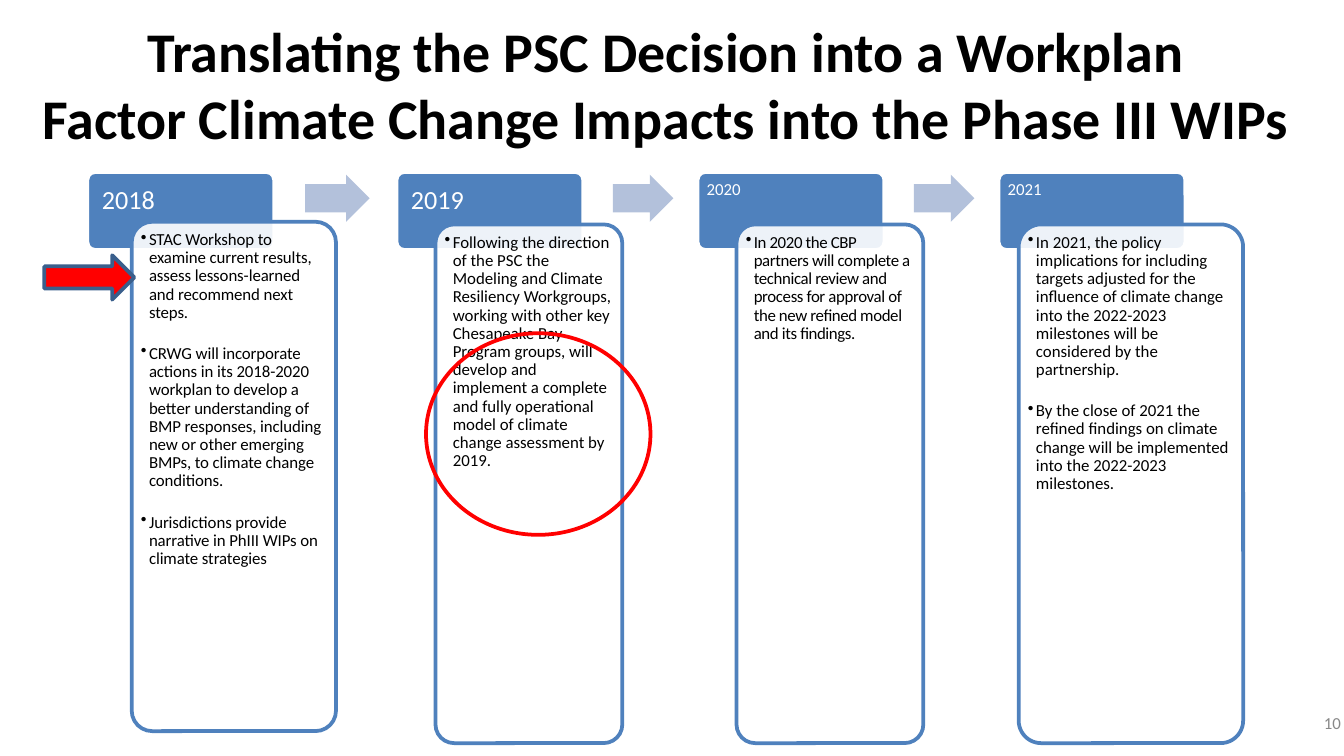
import pptx
import pptx.util
import pptx.dml.color
import pptx.enum.shapes
import pptx.enum.text
import pptx.oxml
import pptx.oxml.ns

Inches = pptx.util.Inches
Pt = pptx.util.Pt
RGBColor = pptx.dml.color.RGBColor
MSO = pptx.enum.shapes.MSO_SHAPE
ANCHOR = pptx.enum.text.MSO_ANCHOR
ALIGN = pptx.enum.text.PP_ALIGN
qn = pptx.oxml.ns.qn

BLACK = RGBColor(0x00, 0x00, 0x00)
WHITE = RGBColor(0xFF, 0xFF, 0xFF)
BLUE = RGBColor(0x4F, 0x81, 0xBD)
PALE_BLUE = RGBColor(0xB3, 0xC1, 0xDB)
DARK_BLUE = RGBColor(0x3A, 0x5F, 0x8C)
RED = RGBColor(0xFF, 0x00, 0x00)
GRAY = RGBColor(0x88, 0x88, 0x88)


def write(sp, text, size=9, color=BLACK, bold=False, align=ALIGN.LEFT, anchor=ANCHOR.TOP,
          insets=(0, 0, 0, 0), line=None, after=0, bullet=False, spacing=0):
    tf = sp.text_frame
    tf.word_wrap = True
    tf.auto_size = pptx.enum.text.MSO_AUTO_SIZE.NONE
    tf.vertical_anchor = anchor
    tf.margin_left, tf.margin_top, tf.margin_right, tf.margin_bottom = map(Inches, insets)
    for i, part in enumerate(text.split("\n")):
        p = tf.add_paragraph() if i else tf.paragraphs[0]
        p.text = part
        p.alignment = align
        p.line_spacing = line
        p.space_after = Pt(after)
        if bullet:
            pPr = p._p.get_or_add_pPr()
            pPr.set("marL", str(Inches(0.06)))
            pPr.set("indent", str(Inches(-0.06)))
            pPr.append(pptx.oxml.parse_xml(
                '<a:buChar xmlns:a="http://schemas.openxmlformats.org/drawingml/2006/main" char="•"/>'))
        for r in p.runs:
            r.font.name = "Calibri"
            r.font.size = Pt(size)
            r.font.bold = bold
            r.font.color.rgb = color
            if spacing:
                r._r.get_or_add_rPr().set("spc", str(spacing))


def add_shape(kind, left, top, width, height, fill=None, line=None, adj=()):
    sp = s.shapes.add_shape(kind, Inches(left), Inches(top), Inches(width), Inches(height))
    sp.shadow.inherit = False
    for i, value in enumerate(adj):
        sp.adjustments[i] = value
    if fill is None:
        sp.fill.background()
    else:
        sp.fill.solid()
        sp.fill.fore_color.rgb = fill
    if line is None:
        sp.line.fill.background()
    else:
        sp.line.color.rgb = line
        sp.line.width = Pt(2)
    return sp


prs = pptx.Presentation()
prs.slide_width = Inches(10)
prs.slide_height = Inches(10) * 9 // 16
s = prs.slides.add_slide(prs.slide_layouts[5])

title = s.shapes.title
title.left, title.top, title.width, title.height = map(Inches, (0.24, 0.11, 9.42, 1.02))
write(title, "Translating the PSC Decision into a Workplan\v"
      "Factor Climate Change Impacts into the Phase III WIPs",
      size=30, bold=True, align=ALIGN.CENTER, anchor=ANCHOR.MIDDLE, insets=(0.01, 0.01, 0, 0))

number = s.shapes.add_textbox(Inches(9.83), Inches(5.31), Inches(0.17), Inches(0.13))
write(number, "10", color=GRAY, anchor=ANCHOR.MIDDLE, insets=(0.02, 0, 0, 0))

years = [
    ("2018", 14, 0.65, (0.98, 1.65, 1.52, 3.79), -5,
     "STAC Workshop to examine current results, assess lessons-learned and recommend next steps.\n"
     "CRWG will incorporate actions in its 2018-2020 workplan to develop a better understanding of "
     "BMP responses, including new or other emerging BMPs, to climate change conditions.\n"
     "Jurisdictions provide narrative in PhIII WIPs on climate strategies"),
    ("2019", 14, 2.95, (3.24, 1.67, 1.39, 3.86), 0,
     "Following the direction of the PSC the Modeling and Climate Resiliency Workgroups, working with "
     "other key Chesapeake Bay Program groups, will develop and implement a complete and fully "
     "operational model of climate change assessment by 2019."),
    ("2020", 9, 5.19, (5.48, 1.67, 1.39, 3.86), -20,
     "In 2020 the CBP partners will complete a technical review and process for approval of the new "
     "refined model and its findings."),
    ("2021", 9, 7.43, (7.58, 1.67, 1.67, 3.86), 0,
     "In 2021, the policy implications for including targets adjusted for the influence of climate "
     "change into the 2022-2023 milestones will be considered by the partnership.\n"
     "By the close of 2021 the refined findings on climate change will be implemented into the "
     "2022-2023 milestones."),
]
for year, size, left, box, spacing, text in years:
    header = add_shape(MSO.ROUNDED_RECTANGLE, left, 1.28, 1.39, 0.58, BLUE, WHITE, (0.1,))
    pad = 0.09 if size == 14 else 0.05
    write(header, year, size=size, color=WHITE, insets=(pad, pad, pad, 0.04), line=0.9)

    panel = add_shape(MSO.ROUNDED_RECTANGLE, *box, WHITE, BLUE, (0.1,))
    color = panel.fill._xPr.find(qn("a:solidFill"))[0]
    color.append(pptx.oxml.parse_xml(
        '<a:alpha xmlns:a="http://schemas.openxmlformats.org/drawingml/2006/main" val="90000"/>'))
    pad = 0.07 - 0.03 * box[2]
    write(panel, text, insets=(pad,) * 4, line=0.9, after=12.3, bullet=True, spacing=spacing)

for left, width in ((2.27, 0.48), (4.56, 0.45), (6.8, 0.45)):
    add_shape(MSO.RIGHT_ARROW, left, 1.3, width, 0.35, PALE_BLUE, adj=(0.6, 0.5))

add_shape(MSO.OVAL, 3.17, 2.48, 1.67, 1.5, line=RED)
add_shape(MSO.RIGHT_ARROW, 0.33, 1.9, 0.67, 0.33, RED, DARK_BLUE)

prs.save("out.pptx")
